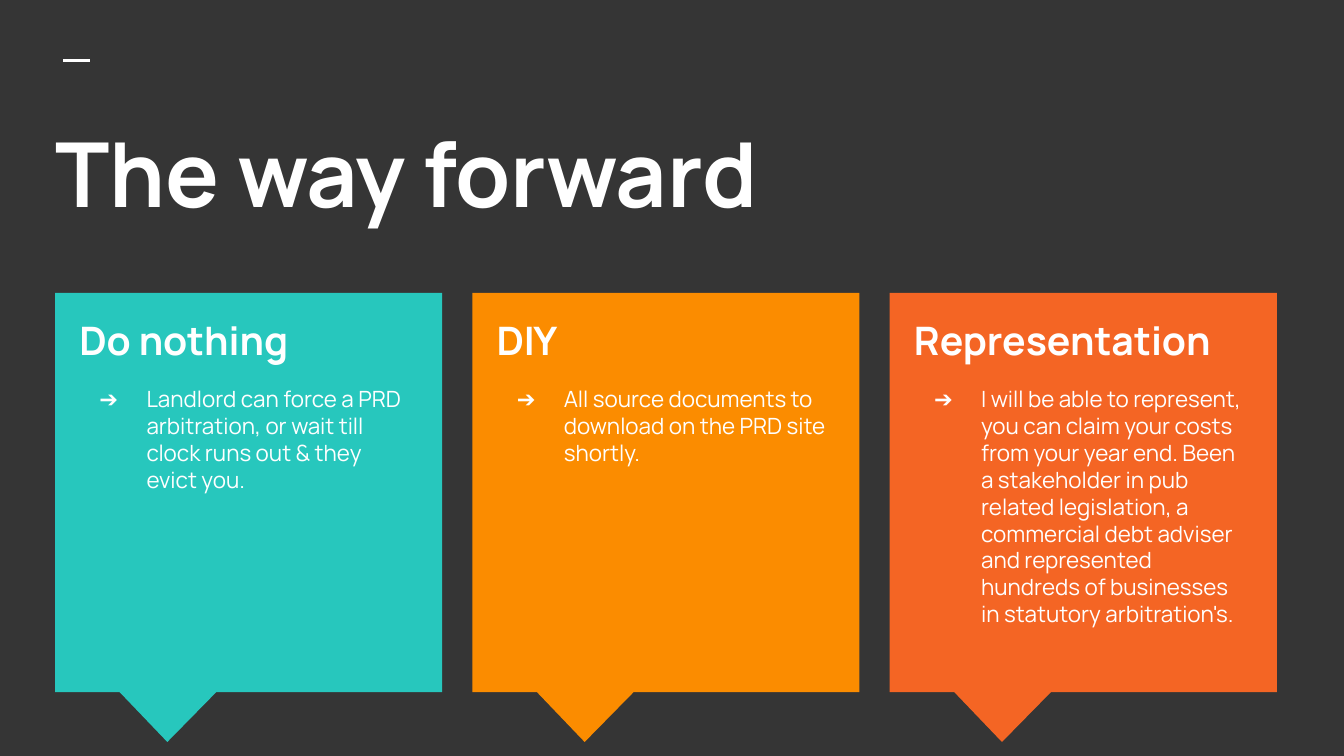
from dataclasses import dataclass

from lxml import etree
from pptx import Presentation
from pptx.dml.color import RGBColor
from pptx.enum.shapes import MSO_CONNECTOR, MSO_SHAPE
from pptx.enum.text import MSO_ANCHOR, MSO_AUTO_SIZE, PP_ALIGN
from pptx.oxml.ns import qn
from pptx.util import Inches, Pt

STRAIGHT = MSO_CONNECTOR.STRAIGHT
CALLOUT = MSO_SHAPE.RECTANGULAR_CALLOUT
TOP = MSO_ANCHOR.TOP
NO_AUTOFIT = MSO_AUTO_SIZE.NONE
LEFT = PP_ALIGN.LEFT

COMPARISON_LAYOUT = 4
FONT = "Manrope"
COLORS = {
    "background": "353535",
    "text": "FFFFFF",
    "teal": "27C7BD",
    "amber": "FB8C00",
    "orange": "F46524",
}

# Card grid, in inches
GRID_LEFT, GRID_RIGHT, GRID_TOP = 0.41, 9.5, 2.18
CARD_WIDTH, CARD_HEIGHT = 2.88, 2.97
TEXT_WIDTH, TEXT_HEIGHT = 2.71, 2.19
TEXT_INSET_X, TEXT_INSET_Y = 0.08, 0.07


@dataclass(frozen=True)
class Option:
    heading: str
    detail: str
    color: str


OPTIONS = [
    Option("Do nothing",
           "Landlord can force a PRD arbitration, or wait till clock runs out "
           "& they evict you.", "teal"),
    Option("DIY",
           "All source documents to download on the PRD site shortly.", "amber"),
    Option("Representation",
           "I will be able to represent, you can claim your costs from your "
           "year end. Been a stakeholder in pub related legislation, a "
           "commercial debt adviser and represented hundreds of businesses in "
           "statutory arbitration's.", "orange"),
]
COLUMN_STEP = (GRID_RIGHT - GRID_LEFT - CARD_WIDTH) / (len(OPTIONS) - 1)


def rgb(name: str) -> RGBColor:
    return RGBColor.from_string(COLORS[name])


def place(placeholder, left: float, top: float, width: float, height: float):
    """Move a placeholder to the front and return its emptied text frame."""
    placeholder.left, placeholder.top = Inches(left), Inches(top)
    placeholder.width, placeholder.height = Inches(width), Inches(height)
    tree = placeholder.element.getparent()
    tree.append(placeholder.element)
    frame = placeholder.text_frame
    frame.word_wrap = True
    frame.auto_size = NO_AUTOFIT
    frame.vertical_anchor = TOP
    frame.margin_left = frame.margin_right = Inches(0.1)
    frame.margin_top = frame.margin_bottom = Inches(0.1)
    return frame


def write(paragraph, text: str, size: float, bold: bool,
          before: float = 0, after: float = 0) -> None:
    paragraph.alignment = LEFT
    paragraph.line_spacing = 1.0
    paragraph.space_before, paragraph.space_after = Pt(before), Pt(after)
    run = paragraph.add_run()
    run.text = text
    run.font.name = FONT
    run.font.size = Pt(size)
    run.font.bold = bold
    run.font.color.rgb = rgb("text")


def set_bullet(paragraph, character: str = "", margin: float = 0,
               indent: float = 0) -> None:
    """Give the paragraph a bullet, or none when no character is given."""
    properties = paragraph._p.get_or_add_pPr()
    properties.set("marL", str(Inches(margin)))
    properties.set("indent", str(Inches(indent)))
    if not character:
        etree.SubElement(properties, qn("a:buNone"))
        return
    bullet_color = etree.SubElement(properties, qn("a:buClr"))
    etree.SubElement(bullet_color, qn("a:srgbClr"), val=COLORS["text"])
    etree.SubElement(properties, qn("a:buFont"), typeface=FONT)
    etree.SubElement(properties, qn("a:buChar"), char=character)


def draw_accent_line(slide) -> None:
    line = slide.shapes.add_connector(
        STRAIGHT, Inches(0.47), Inches(0.45), Inches(0.67), Inches(0.45))
    line.line.color.rgb = rgb("text")
    line.line.width = Pt(1.5)
    etree.SubElement(line.element.spPr, qn("a:effectLst"))


def draw_option(slide, column: int, option: Option, placeholder) -> None:
    left = GRID_LEFT + column * COLUMN_STEP
    card = slide.shapes.add_shape(
        CALLOUT, Inches(left), Inches(GRID_TOP),
        Inches(CARD_WIDTH), Inches(CARD_HEIGHT))
    card.adjustments[0], card.adjustments[1] = -0.21, 0.625
    card.fill.solid()
    card.fill.fore_color.rgb = rgb(option.color)
    card.line.fill.background()
    card.shadow.inherit = False

    frame = place(placeholder, left + TEXT_INSET_X, GRID_TOP + TEXT_INSET_Y,
                  TEXT_WIDTH, TEXT_HEIGHT)
    heading = frame.paragraphs[0]
    write(heading, option.heading, 21, True)
    set_bullet(heading)
    detail = frame.add_paragraph()
    write(detail, option.detail, 12, False, before=12, after=10)
    set_bullet(detail, "➔", margin=0.5, indent=-0.35)


def main() -> None:
    presentation = Presentation()
    presentation.slide_width = Inches(10)
    presentation.slide_height = Inches(10) * 9 // 16
    slide = presentation.slides.add_slide(
        presentation.slide_layouts[COMPARISON_LAYOUT])
    slide.background.fill.solid()
    slide.background.fill.fore_color.rgb = rgb("background")

    title, *bodies = slide.placeholders
    draw_accent_line(slide)
    write(place(title, 0.31, 0.78, 9.43, 1.12).paragraphs[0],
          "The way forward", 48, True)
    for column, (option, body) in enumerate(zip(OPTIONS, bodies)):
        draw_option(slide, column, option, body)
    for unused in bodies[len(OPTIONS):]:
        unused.element.getparent().remove(unused.element)

    presentation.save("out.pptx")


if __name__ == "__main__":
    main()
